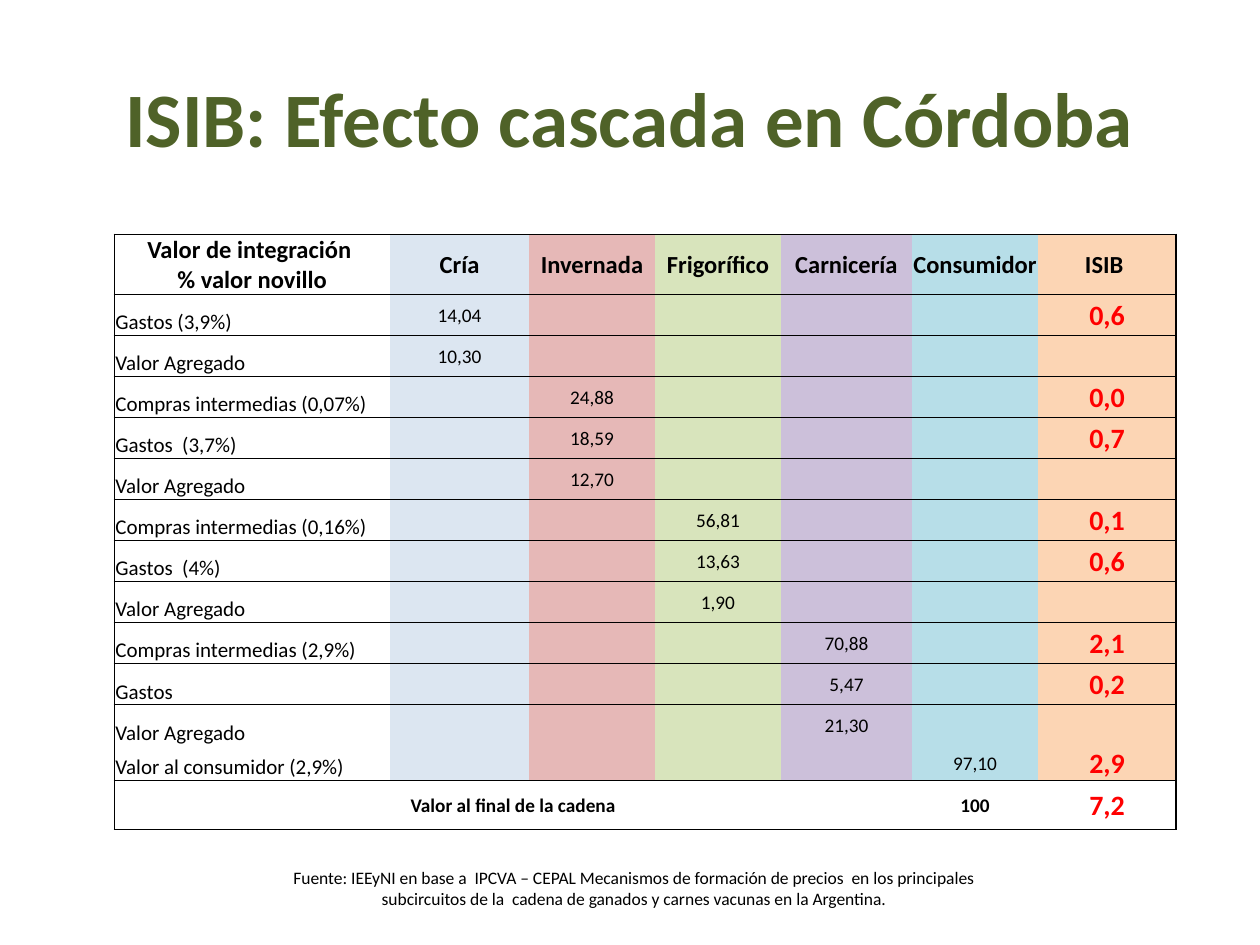
from lxml.etree import SubElement
from pptx import Presentation
from pptx.dml.color import RGBColor
from pptx.enum.text import MSO_ANCHOR as Anchor, PP_ALIGN as Align
from pptx.oxml.ns import qn
from pptx.util import Pt

FONT = "Calibri"
BLACK, RED, OLIVE = "000000", "FF0000", "4F6228"
NO_STYLE = "{2D5ABB26-0587-4C30-8999-92F81FD0307C}"
STAGES = ["Cría", "Invernada", "Frigorífico", "Carnicería", "Consumidor", "ISIB "]
STAGE_FILLS = ["DCE6F1", "E6B8B7", "D8E4BC", "CCC0DA", "B7DEE8", "FCD5B4"]
COLUMN_WIDTHS = [157.6, 79.4, 72, 72, 74.9, 72, 78.8]
ROW_HEIGHTS = [34.2] + [23.45] * 11 + [19.5, 28.1]
ENTRIES = [
    ("Gastos (3,9%)", 1, "14,04", "0,6"),
    ("Valor Agregado", 1, "10,30", ""),
    ("Compras intermedias (0,07%)", 2, "24,88", "0,0"),
    ("Gastos  (3,7%)", 2, "18,59", "0,7"),
    ("Valor Agregado", 2, "12,70", ""),
    ("Compras intermedias (0,16%)", 3, "56,81", "0,1"),
    ("Gastos  (4%)", 3, "13,63", "0,6"),
    ("Valor Agregado", 3, "1,90", ""),
    ("Compras intermedias (2,9%)", 4, "70,88", "2,1"),
    ("Gastos", 4, "5,47", "0,2"),
    ("Valor Agregado", 4, "21,30", ""),
    ("Valor al consumidor (2,9%)", 5, "97,10", "2,9"),
]
RULED_BELOW = {0, 2, 3, 5, 6, 8, 9, 12, 13}
TOTAL_ROW = len(ENTRIES) + 1
ISIB_COLUMN = len(STAGES)


def color(code):
    return RGBColor.from_string(code)


def write(frame, text, size, ink=BLACK, bold=False, align=Align.CENTER):
    frame.text = text
    for paragraph in frame.paragraphs:
        paragraph.alignment = align
        for run in paragraph.runs:
            run.font.name = FONT
            run.font.size = Pt(size)
            run.font.bold = bold
            run.font.color.rgb = color(ink)


def add_text(slide, left, top, width, height, text, size, anchor=Anchor.TOP, **style):
    frame = slide.shapes.add_textbox(Pt(left), Pt(top), Pt(width), Pt(height)).text_frame
    frame.word_wrap = True
    frame.vertical_anchor = anchor
    write(frame, text, size, **style)


def rule_edges(cell, row, column):
    edges = {
        "a:lnL": column == 0,
        "a:lnR": column == ISIB_COLUMN,
        "a:lnT": row == 0 or row - 1 in RULED_BELOW,
        "a:lnB": row in RULED_BELOW,
    }
    properties = cell._tc.get_or_add_tcPr()
    for tag, ruled in edges.items():
        if ruled:
            edge = SubElement(properties, qn(tag), w=str(Pt(1)))
            ink = SubElement(edge, qn("a:solidFill"))
            SubElement(ink, qn("a:srgbClr"), val=BLACK)


def prepare_cell(cell, row, column):
    cell.margin_left = cell.margin_right = cell.margin_top = Pt(0.7)
    cell.margin_bottom = 0
    cell.vertical_anchor = Anchor.MIDDLE
    rule_edges(cell, row, column)
    if column and row < TOTAL_ROW:
        cell.fill.solid()
        cell.fill.fore_color.rgb = color(STAGE_FILLS[column - 1])
    else:
        cell.fill.background()


def fill_cell(cell, text, size, **style):
    if text:
        write(cell.text_frame, text, size, **style)
    else:
        SubElement(cell.text_frame.paragraphs[0]._p, qn("a:endParaRPr"), sz=str(size * 100))


def add_cascade_table(slide):
    frame = slide.shapes.add_table(
        len(ROW_HEIGHTS), len(COLUMN_WIDTHS), Pt(65.3), Pt(133.9),
        Pt(sum(COLUMN_WIDTHS)), Pt(sum(ROW_HEIGHTS)))
    table = frame.table
    table.first_row = table.horz_banding = False
    table._tbl.tblPr.find(qn("a:tableStyleId")).text = NO_STYLE
    for column, width in zip(table.columns, COLUMN_WIDTHS):
        column.width = Pt(width)
    for row, height in enumerate(ROW_HEIGHTS):
        table.rows[row].height = Pt(height)
        for column in range(len(COLUMN_WIDTHS)):
            prepare_cell(table.cell(row, column), row, column)

    for column, heading in enumerate(["Valor de integración \n% valor novillo"] + STAGES):
        fill_cell(table.cell(0, column), heading, 14, bold=True)

    for row, (concept, stage, share, tax) in enumerate(ENTRIES, 1):
        label = table.cell(row, 0)
        label.vertical_anchor = Anchor.BOTTOM
        fill_cell(label, concept, 12, align=Align.LEFT)
        for column in range(1, ISIB_COLUMN):
            fill_cell(table.cell(row, column), share if column == stage else "", 11)
        fill_cell(table.cell(row, ISIB_COLUMN), tax, 16 if tax else 11, ink=RED, bold=True)

    table.cell(TOTAL_ROW, 0).merge(table.cell(TOTAL_ROW, 4))
    fill_cell(table.cell(TOTAL_ROW, 0), "Valor al final de la cadena", 11, bold=True)
    fill_cell(table.cell(TOTAL_ROW, 5), "100", 11, bold=True)
    fill_cell(table.cell(TOTAL_ROW, ISIB_COLUMN), "7,2", 16, ink=RED, bold=True)


def main():
    deck = Presentation()
    deck.slide_width, deck.slide_height = Pt(720), Pt(540)
    slide = deck.slides.add_slide(deck.slide_layouts[6])
    add_text(slide, 36, 21.6, 648, 90, "ISIB: Efecto cascada en Córdoba", 44,
             Anchor.MIDDLE, ink=OLIVE, bold=True)
    add_text(slide, 110.9, 491.8, 504.7, 31.7,
             "Fuente: IEEyNI en base a  IPCVA – CEPAL Mecanismos de formación de precios"
             "  en los principales \n"
             "subcircuitos de la  cadena de ganados y carnes vacunas en la Argentina. ", 10)
    add_cascade_table(slide)
    deck.save("out.pptx")


if __name__ == "__main__":
    main()
